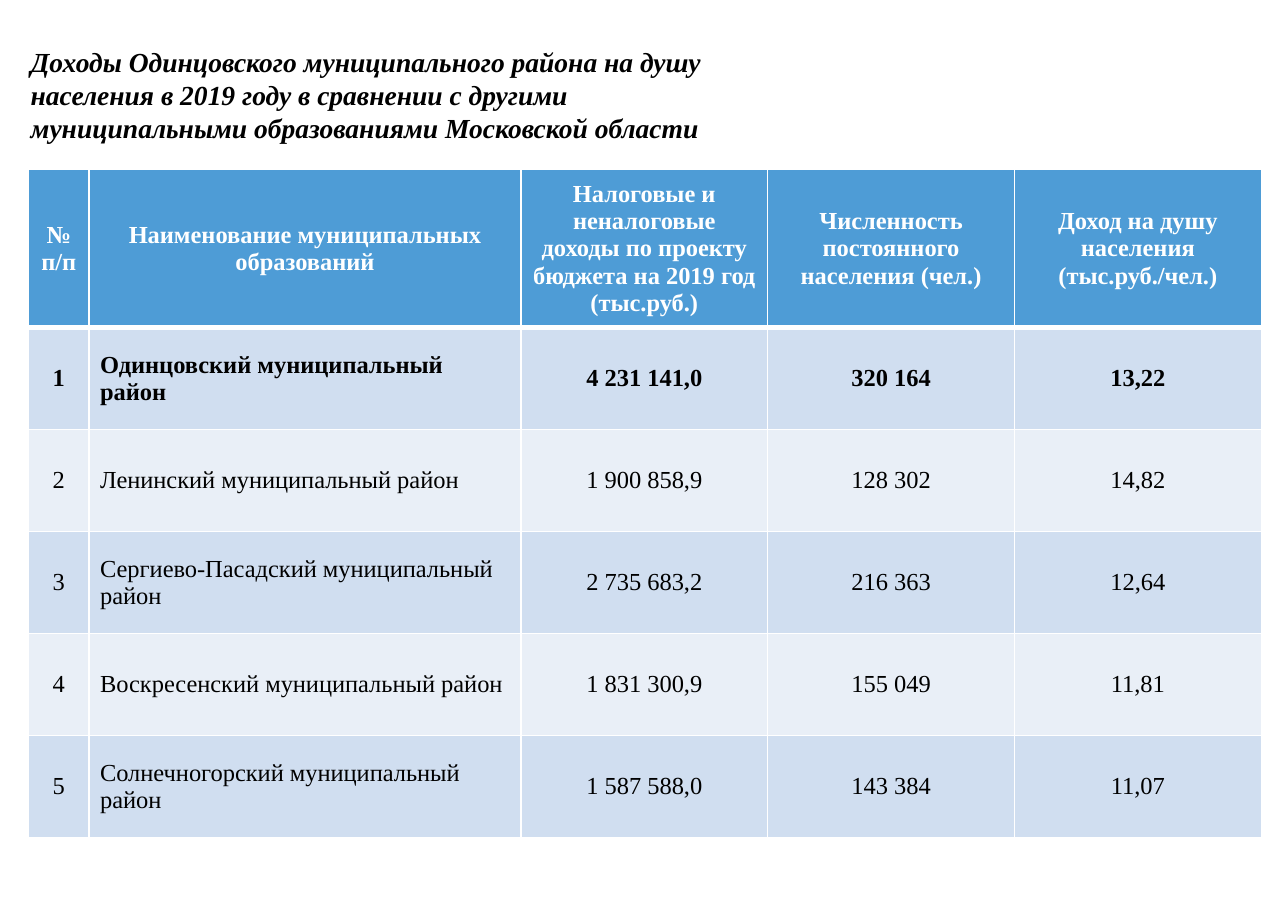
"""Build the slide on per-capita income of Moscow region districts."""
from dataclasses import dataclass

import lxml.etree
import pptx
import pptx.dml.color
import pptx.enum.text
import pptx.oxml
import pptx.oxml.ns
import pptx.table
import pptx.text.text
import pptx.util

COLOURS = {"header": "4E9CD6", "odd": "D0DEF0", "even": "E9EFF7",
           "white": "FFFFFF", "black": "000000"}
FONT = "Times New Roman"
SLIDE_WIDTH = pptx.util.Inches(11.69)
SLIDE_HEIGHT = pptx.util.Inches(8.27)
COLUMN_PERCENTS = (4.7, 33.53, 19.16, 19.16, 19.16)
HEADER_PERCENT, DISTRICT_PERCENT = 14.39, 11.2
NAME_COLUMN = 1
HEADINGS = (
    "№ п/п",
    "Наименование муниципальных образований",
    "Налоговые и неналоговые доходы по проекту бюджета на 2019 год (тыс.руб.)",
    "Численность постоянного населения (чел.)",
    "Доход на душу населения (тыс.руб./чел.)",
)
HEADLINE = ("Доходы Одинцовского муниципального района на душу населения в 2019 году "
            "в сравнении с другими муниципальными образованиями Московской области")


@dataclass(frozen=True)
class District:
    """One municipal district with its budget figures."""
    name: str
    income: str
    population: str
    per_capita: str


@dataclass(frozen=True)
class RowStyle:
    """Look of one table row."""
    fill: str
    ink: str
    bold: bool
    top: int
    bottom: int


DISTRICTS = (
    District("Одинцовский муниципальный район", "4 231 141,0", "320 164", "13,22"),
    District("Ленинский муниципальный район", "1 900 858,9", "128 302", "14,82"),
    District("Сергиево-Пасадский муниципальный район", "2 735 683,2", "216 363", "12,64"),
    District("Воскресенский муниципальный район", "1 831 300,9", "155 049", "11,81"),
    District("Солнечногорский муниципальный район", "1 587 588,0", "143 384", "11,07"),
)


def across(percent: float) -> int:
    """Return a share of the slide's width."""
    return round(SLIDE_WIDTH * percent / 100)


def down(percent: float) -> int:
    """Return a share of the slide's height."""
    return round(SLIDE_HEIGHT * percent / 100)


def rgb(colour: str) -> pptx.dml.color.RGBColor:
    """Look up a named colour."""
    return pptx.dml.color.RGBColor.from_string(COLOURS[colour])


def add_text(paragraph: pptx.text.text._Paragraph, words: str, size: int,
             colour: str, bold: bool, italic: bool = False) -> None:
    """Add one formatted run."""
    run = paragraph.add_run()
    run.text = words
    run.font.name = FONT
    run.font.size = pptx.util.Pt(size)
    run.font.bold = bold
    run.font.italic = italic
    run.font.color.rgb = rgb(colour)


def add_borders(cell: pptx.table._Cell, style: RowStyle) -> None:
    """Draw white lines on the four sides of a cell."""
    properties = cell._tc.get_or_add_tcPr()
    sides = {"a:lnL": 1, "a:lnR": 1, "a:lnT": style.top, "a:lnB": style.bottom}
    for position, (side, points) in enumerate(sides.items()):
        line = lxml.etree.Element(pptx.oxml.ns.qn(side), w=str(pptx.util.Pt(points)))
        solid = lxml.etree.SubElement(line, pptx.oxml.ns.qn("a:solidFill"))
        lxml.etree.SubElement(solid, pptx.oxml.ns.qn("a:srgbClr"), val=COLOURS["white"])
        properties.insert(position, line)


def fill_row(table: pptx.table.Table, number: int, entries: tuple[str, ...],
             style: RowStyle) -> None:
    """Write and style one table row."""
    for column, words in enumerate(entries):
        cell = table.cell(number, column)
        cell.vertical_anchor = pptx.enum.text.MSO_ANCHOR.MIDDLE
        cell.fill.solid()
        cell.fill.fore_color.rgb = rgb(style.fill)
        add_borders(cell, style)
        paragraph = cell.text_frame.paragraphs[0]
        centred = number == 0 or column != NAME_COLUMN
        paragraph.alignment = (pptx.enum.text.PP_ALIGN.CENTER if centred
                               else pptx.enum.text.PP_ALIGN.LEFT)
        add_text(paragraph, words, 16, style.ink, style.bold)


def main() -> None:
    """Build and save the slide."""
    presentation = pptx.Presentation()
    presentation.slide_width = SLIDE_WIDTH
    presentation.slide_height = SLIDE_HEIGHT
    slide = presentation.slides.add_slide(presentation.slide_layouts[6])

    headline = slide.shapes.add_textbox(
        across(1.54), down(4.23), across(59.97), down(12.33)).text_frame
    headline.word_wrap = True
    headline.vertical_anchor = pptx.enum.text.MSO_ANCHOR.MIDDLE
    add_text(headline.paragraphs[0], HEADLINE, 18, "black", bold=True, italic=True)

    table_height = HEADER_PERCENT + DISTRICT_PERCENT * len(DISTRICTS)
    comparison = slide.shapes.add_table(
        len(DISTRICTS) + 1, len(HEADINGS), across(2.22), down(18.62),
        across(sum(COLUMN_PERCENTS)), down(table_height)).table
    for column, percent in zip(comparison.columns, COLUMN_PERCENTS):
        column.width = across(percent)
    for number, row in enumerate(comparison.rows):
        row.height = down(DISTRICT_PERCENT if number else HEADER_PERCENT)

    fill_row(comparison, 0, HEADINGS, RowStyle("header", "white", True, 1, 3))
    for number, district in enumerate(DISTRICTS, start=1):
        leading = number == 1
        style = RowStyle("odd" if number % 2 else "even", "black", leading,
                         3 if leading else 1, 1)
        entries = (str(number), district.name, district.income,
                   district.population, district.per_capita)
        fill_row(comparison, number, entries, style)

    presentation.save("out.pptx")


if __name__ == "__main__":
    main()
